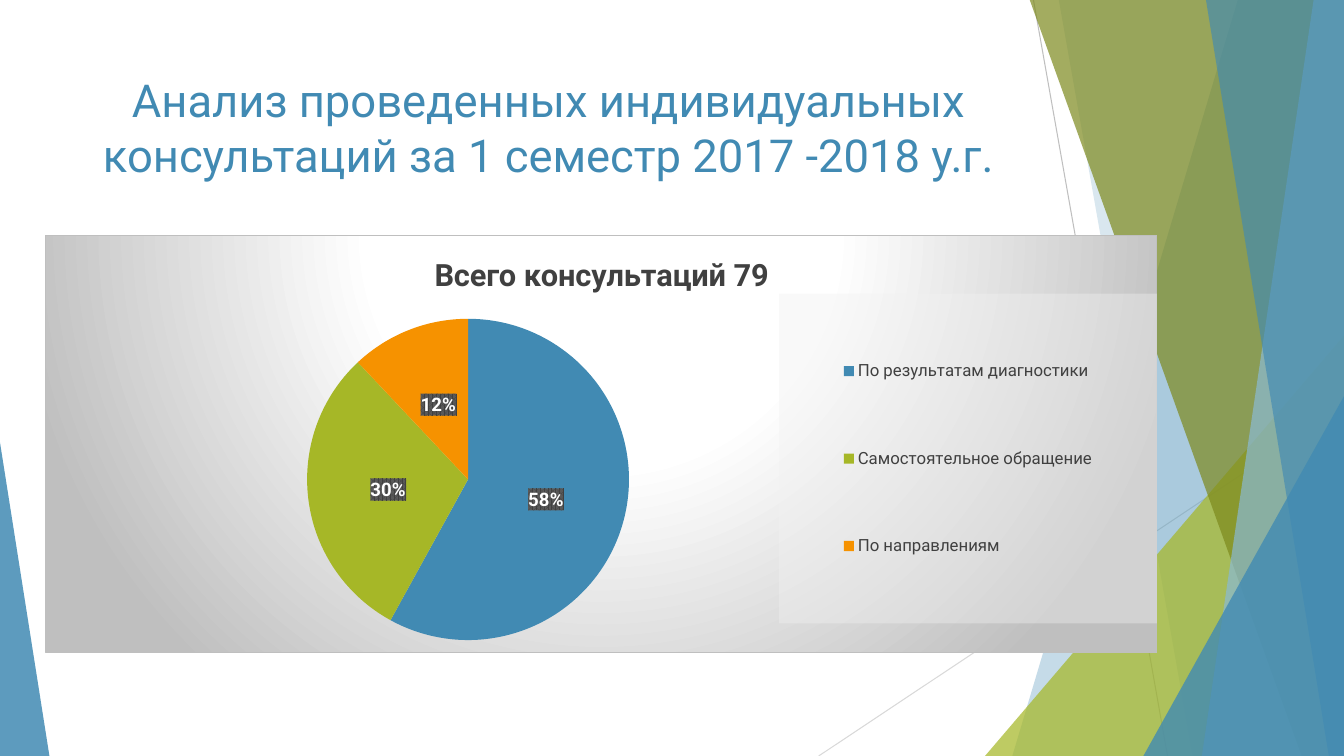
from dataclasses import dataclass

from lxml import etree
from pptx import Presentation
from pptx.chart.data import CategoryChartData
from pptx.dml.color import RGBColor
from pptx.enum.chart import XL_CHART_TYPE, XL_LABEL_POSITION, XL_LEGEND_POSITION
from pptx.enum.shapes import MSO_CONNECTOR, MSO_SHAPE
from pptx.enum.text import MSO_ANCHOR, MSO_AUTO_SIZE, PP_ALIGN
from pptx.oxml import parse_xml
from pptx.oxml.ns import qn
from pptx.util import Inches, Pt

PIE = XL_CHART_TYPE.PIE
LABEL_CENTER = XL_LABEL_POSITION.CENTER
LEGEND_RIGHT = XL_LEGEND_POSITION.RIGHT
STRAIGHT = MSO_CONNECTOR.STRAIGHT
TRIANGLE = MSO_SHAPE.ISOSCELES_TRIANGLE
TOP = MSO_ANCHOR.TOP
NO_FIT = MSO_AUTO_SIZE.NONE
CENTER = PP_ALIGN.CENTER
NS = ('xmlns:c="http://schemas.openxmlformats.org/drawingml/2006/chart" '
      'xmlns:a="http://schemas.openxmlformats.org/drawingml/2006/main"')


@dataclass(frozen=True)
class Theme:
    font: str = "Roboto"
    blue: str = "418AB3"
    pale_blue: str = "8ABAD4"
    green: str = "A6B727"
    olive: str = "7D891D"
    orange: str = "F69200"
    white: str = "FFFFFF"
    mist: str = "F2F2F2"
    pale: str = "D9D9D9"
    silver: str = "BFBFBF"
    gray: str = "595959"
    dark: str = "404040"
    title: float = 32.4
    chart_title: float = 22
    label: float = 13.3
    legend: float = 12
    base: float = 10


T = Theme()
W, H = 13.33, 7.5


def style_font(font, size, color, bold=False):
    font.name = T.font
    font.size = Pt(size)
    font.bold = bold
    font.color.rgb = RGBColor.from_string(color)


def paint(shape, color, opacity):
    shape.shadow.inherit = False
    shape.fill.solid()
    shape.fill.fore_color.rgb = RGBColor.from_string(color)
    shape.line.fill.background()
    clr = shape.fill._xPr.find(qn("a:solidFill"))[0]
    etree.SubElement(clr, qn("a:alpha")).set("val", str(opacity * 1000))


def add_line(s, x1, y1, x2, y2, color):
    line = s.shapes.add_connector(
        STRAIGHT, Inches(x1), Inches(y1), Inches(x2), Inches(y2))
    line.line.color.rgb = RGBColor.from_string(color)
    line.line.width = Pt(0.75)
    etree.SubElement(line._element.spPr, qn("a:effectLst"))


def add_band(s, right, bottom, x_top, x_bottom, color, opacity):
    top = -0.01
    corners = [(x_top, top), (right, top), (right, bottom), (x_bottom, bottom)]
    points = [(Inches(x), Inches(y)) for x, y in corners]
    builder = s.shapes.build_freeform(*points[0], scale=1.0)
    builder.add_line_segments(points[1:], close=True)
    paint(builder.convert_to_shape(), color, opacity)


def add_triangle(s, x, bottom, w, h, apex, color, opacity):
    sp = s.shapes.add_shape(
        TRIANGLE, Inches(x), Inches(bottom - h), Inches(w), Inches(h))
    sp.adjustments[0] = apex
    paint(sp, color, opacity)


def add_decor(s, w, h):
    add_line(s, w - 3.08, 0, w - 1.75, h, T.silver)
    add_line(s, w, 4.03, w - 5.21, h, T.pale)
    add_band(s, w, h, w - 1.05, w - 3.29, T.blue, 30)
    add_band(s, w, h, w - 2.83, w - 1.5, T.blue, 20)
    add_triangle(s, w - 3.56, h, 3.56, 4.17, 1, T.green, 72)
    add_band(s, w, h, w - 3.12, w - 0.42, T.olive, 70)
    add_band(s, w, h, w - 0.3, w - 1.41, T.pale_blue, 70)
    add_band(s, w, h, w - 1.37, w - 0.15, T.blue, 65)
    add_triangle(s, w - 1.99, h, 1.99, 3.57, 1, T.blue, 80)
    add_triangle(s, 0, h, 0.49, 3.11, 0, T.blue, 85)


def add_title(s, x, y, w, h, text):
    sp = s.shapes.title
    sp.left, sp.top, sp.width, sp.height = map(Inches, (x, y, w, h))
    tf = sp.text_frame
    tf.word_wrap = True
    tf.auto_size = NO_FIT
    tf.vertical_anchor = TOP
    p = tf.paragraphs[0]
    p.alignment = CENTER
    r = p.add_run()
    r.text = text
    style_font(r.font, T.title, T.blue)


def layout_xml(x, y, w, h, inner=False):
    target = '<c:layoutTarget val="inner"/>' if inner else ""
    return parse_xml(
        f'<c:layout {NS}><c:manualLayout>{target}'
        '<c:xMode val="edge"/><c:yMode val="edge"/>'
        f'<c:x val="{x}"/><c:y val="{y}"/><c:w val="{w}"/><c:h val="{h}"/>'
        '</c:manualLayout></c:layout>')


def add_sp_pr(parent, content):
    parent.find(qn("c:txPr")).addprevious(
        parse_xml(f'<c:spPr {NS}>{content}</c:spPr>'))


def color_xml(color, extra=""):
    return f'<a:srgbClr val="{color}">{extra}</a:srgbClr>'


def style_legend(chart):
    chart.has_legend = True
    legend = chart.legend
    legend.position = LEGEND_RIGHT
    legend.include_in_layout = False
    style_font(legend.font, T.legend, T.dark)
    el = legend._element
    for old in el.findall(qn("c:layout")):
        el.remove(old)
    el.find(qn("c:legendPos")).addnext(layout_xml(0.66, 0.14, 0.34, 0.79))
    fill = color_xml(T.mist, '<a:alpha val="39000"/>')
    add_sp_pr(el, f'<a:solidFill>{fill}</a:solidFill><a:ln><a:noFill/></a:ln>')


def style_labels(plot):
    plot.has_data_labels = True
    labels = plot.data_labels
    labels.show_percentage = True
    labels.show_value = False
    labels.number_format = "0%"
    labels.number_format_is_linked = False
    labels.position = LABEL_CENTER
    style_font(labels.font, T.label, T.white, True)
    add_sp_pr(labels._element,
              f'<a:pattFill prst="pct75"><a:fgClr>{color_xml(T.dark)}</a:fgClr>'
              f'<a:bgClr>{color_xml(T.gray)}</a:bgClr></a:pattFill>')


def style_background(chart):
    stops = "".join(
        f'<a:gs pos="{pos * 1000}">{color_xml(color)}</a:gs>'
        for pos, color in [(0, T.white), (39, T.white), (100, T.silver)])
    add_sp_pr(chart._chartSpace,
              f'<a:gradFill><a:gsLst>{stops}</a:gsLst><a:path path="circle">'
              '<a:fillToRect l="50000" t="-80000" r="50000" b="180000"/>'
              '</a:path></a:gradFill><a:ln w="9525"><a:solidFill>'
              f'{color_xml(T.silver)}</a:solidFill></a:ln>')


def add_pie(s, x, y, w, h, title, shares):
    data = CategoryChartData()
    data.categories = [name for name, _, _ in shares]
    data.add_series(title, [value for _, value, _ in shares])
    chart = s.shapes.add_chart(
        PIE, Inches(x), Inches(y), Inches(w), Inches(h), data).chart
    style_font(chart.font, T.base, "000000")
    chart.has_title = True
    r = chart.chart_title.text_frame.paragraphs[0].add_run()
    r.text = title
    style_font(r.font, T.chart_title, T.dark, True)
    plot = chart.plots[0]
    plot.vary_by_categories = True
    for i, (_, _, color) in enumerate(shares):
        fill = plot.series[0].points[i].format.fill
        fill.solid()
        fill.fore_color.rgb = RGBColor.from_string(color)
    style_labels(plot)
    style_legend(chart)
    style_background(chart)
    area = chart._chartSpace.chart.plotArea
    for old in area.findall(qn("c:layout")):
        area.remove(old)
    area.insert(0, layout_xml(0.23, 0.2, 0.3, 0.77, inner=True))


def main():
    prs = Presentation()
    prs.slide_width, prs.slide_height = Inches(W), Inches(H)
    s = prs.slides.add_slide(prs.slide_layouts[5])
    add_decor(s, W, H)
    add_title(s, 0.74, 0.67, 9.4, 1.44,
              "Анализ проведенных индивидуальных консультаций "
              "за 1 семестр 2017 -2018 у.г.")
    add_pie(s, 0.45, 2.33, 11.03, 4.15, "Всего консультаций 79", [
        ("По результатам диагностики", 58, T.blue),
        ("Самостоятельное обращение", 30, T.green),
        ("По направлениям", 12, T.orange),
    ])
    prs.save("out.pptx")


if __name__ == "__main__":
    main()
